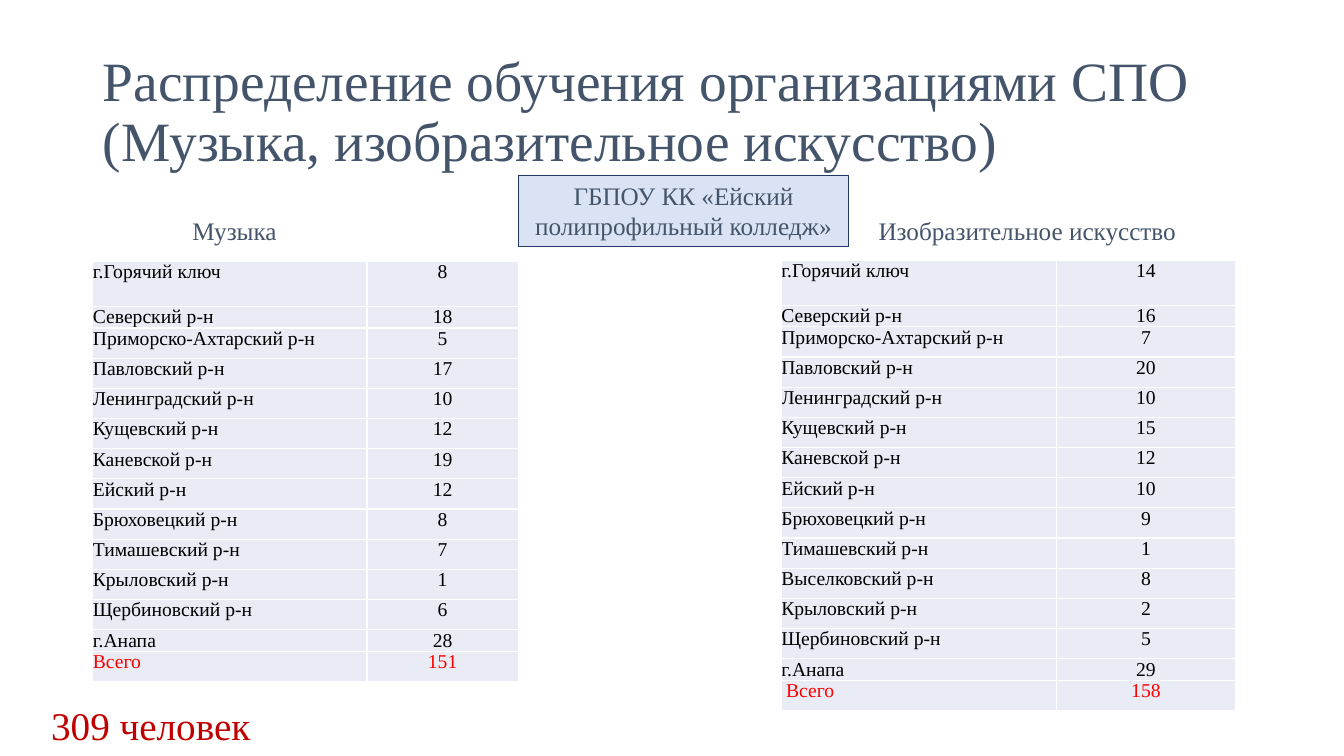
"""Build the slide on training places for music and fine art."""
from lxml.etree import SubElement
from pptx import Presentation
from pptx.dml.color import RGBColor
from pptx.enum.shapes import MSO_SHAPE
from pptx.enum.text import MSO_ANCHOR, MSO_AUTO_SIZE, PP_ALIGN
from pptx.oxml.ns import qn
from pptx.util import Cm, Pt

TITLE = "Распределение обучения организациями СПО (Музыка, изобразительное искусство)"
COLLEGE = "ГБПОУ КК «Ейский полипрофильный колледж»"
TOTAL = "Всего"
PLACES = [
    ("г.Горячий ключ", 8, 14),
    ("Северский р-н", 18, 16),
    ("Приморско-Ахтарский р-н", 5, 7),
    ("Павловский р-н", 17, 20),
    ("Ленинградский р-н", 10, 10),
    ("Кущевский р-н", 12, 15),
    ("Каневской р-н", 19, 12),
    ("Ейский р-н", 12, 10),
    ("Брюховецкий р-н", 8, 9),
    ("Тимашевский р-н", 7, 1),
    ("Выселковский р-н", None, 8),
    ("Крыловский р-н", 1, 2),
    ("Щербиновский р-н", 6, 5),
    ("г.Анапа", 28, 29),
]
TABLES = [
    {"left": 2.34, "top": 6.58, "widths": (6.91, 3.81), "indent": 0},
    {"left": 19.69, "top": 6.55, "widths": (6.93, 4.52), "indent": 0.12},
]
LABELS = [
    ("309 человек", (1.04, 17.55, 5.82, 1.45), 28, "total"),
    ("Музыка", (4.6, 5.31, 2.67, 1.02), 18, "slate"),
    ("Изобразительное искусство", (21.89, 5.31, 8.05, 1.02), 18, "slate"),
]
HEIGHTS = {"г.Горячий ключ": 1.14, "Северский р-н": 0.48, "г.Анапа": 0.48}
ROW = 0.76
COLORS = {
    "slate": "44546A", "box": "DAE3F3", "edge": "203864", "total": "C00000",
    "cell": "E9EBF5", "rule": "FFFFFF", "text": "000000", "sum": "FF0000",
}


def color(name):
    return RGBColor.from_string(COLORS[name])


def write(frame, text, size, tint, align=PP_ALIGN.LEFT, **form):
    for name, value in form.items():
        setattr(frame, name, value)
    para = frame.paragraphs[0]
    para.alignment = align
    run = para.add_run()
    run.text = text
    for name, value in {"name": "Times New Roman", "size": Pt(size)}.items():
        setattr(run.font, name, value)
    run.font.color.rgb = color(tint)
    return para


def border(cell):
    props = cell._tc.get_or_add_tcPr()
    for at, side in enumerate(("lnL", "lnR", "lnT", "lnB")):
        line = SubElement(props, qn(f"a:{side}"), w=str(Pt(1)))
        fill = SubElement(line, qn("a:solidFill"))
        SubElement(fill, qn("a:srgbClr"), val=COLORS["rule"])
        props.insert(at, line)


def add_grid(slide, rows, left, top, widths, indent):
    heights = [HEIGHTS.get(name, ROW) for name, count in rows]
    box = map(Cm, (left, top, sum(widths), sum(heights)))
    grid = slide.shapes.add_table(len(rows), len(widths), *box).table
    grid.first_row = grid.horz_banding = False
    for col, width in zip(grid.columns, widths):
        col.width = Cm(width)
    for line, height, row in zip(grid.rows, heights, rows):
        line.height = Cm(height)
        tint = "sum" if row[0] == TOTAL else "text"
        aligns = (PP_ALIGN.LEFT, PP_ALIGN.CENTER)
        for cell, value, align in zip(line.cells, row, aligns):
            for side in ("left", "right", "top", "bottom"):
                setattr(cell, f"margin_{side}", 0)
            cell.fill.solid()
            cell.fill.fore_color.rgb = color("cell")
            border(cell)
            write(cell.text_frame, str(value), 14, tint, align)
    grid.cell(len(rows) - 1, 0).margin_left = Cm(indent)


def main():
    deck = Presentation()
    deck.slide_width, deck.slide_height = Cm(33.87), Cm(19.05)
    slide = deck.slides.add_slide(deck.slide_layouts[5])

    title = slide.shapes.title
    spots = zip(("left", "top", "width", "height"), (2.34, 1.02, 29.21, 3.68))
    for name, value in spots:
        setattr(title, name, Cm(value))
    para = write(title.text_frame, TITLE, 39.6, "slate", word_wrap=True,
                 auto_size=MSO_AUTO_SIZE.NONE, vertical_anchor=MSO_ANCHOR.MIDDLE)
    para.line_spacing = 0.9

    box = slide.shapes.add_shape(MSO_SHAPE.RECTANGLE, *map(Cm, (13.06, 4.42, 8.33, 1.8)))
    box.shadow.inherit = False
    box.fill.solid()
    box.fill.fore_color.rgb = color("box")
    box.line.color.rgb = color("edge")
    box.line.width = Pt(0.75)
    write(box.text_frame, COLLEGE, 18, "slate", PP_ALIGN.CENTER, word_wrap=True,
          vertical_anchor=MSO_ANCHOR.TOP)

    for index, place in enumerate(TABLES, 1):
        rows = [(row[0], row[index]) for row in PLACES if row[index] is not None]
        rows.append((TOTAL, sum(count for name, count in rows)))
        add_grid(slide, rows, **place)

    for text, spot, size, tint in LABELS:
        label = slide.shapes.add_textbox(*map(Cm, spot))
        write(label.text_frame, text, size, tint, word_wrap=False,
              auto_size=MSO_AUTO_SIZE.SHAPE_TO_FIT_TEXT)

    deck.save("out.pptx")


if __name__ == "__main__":
    main()
